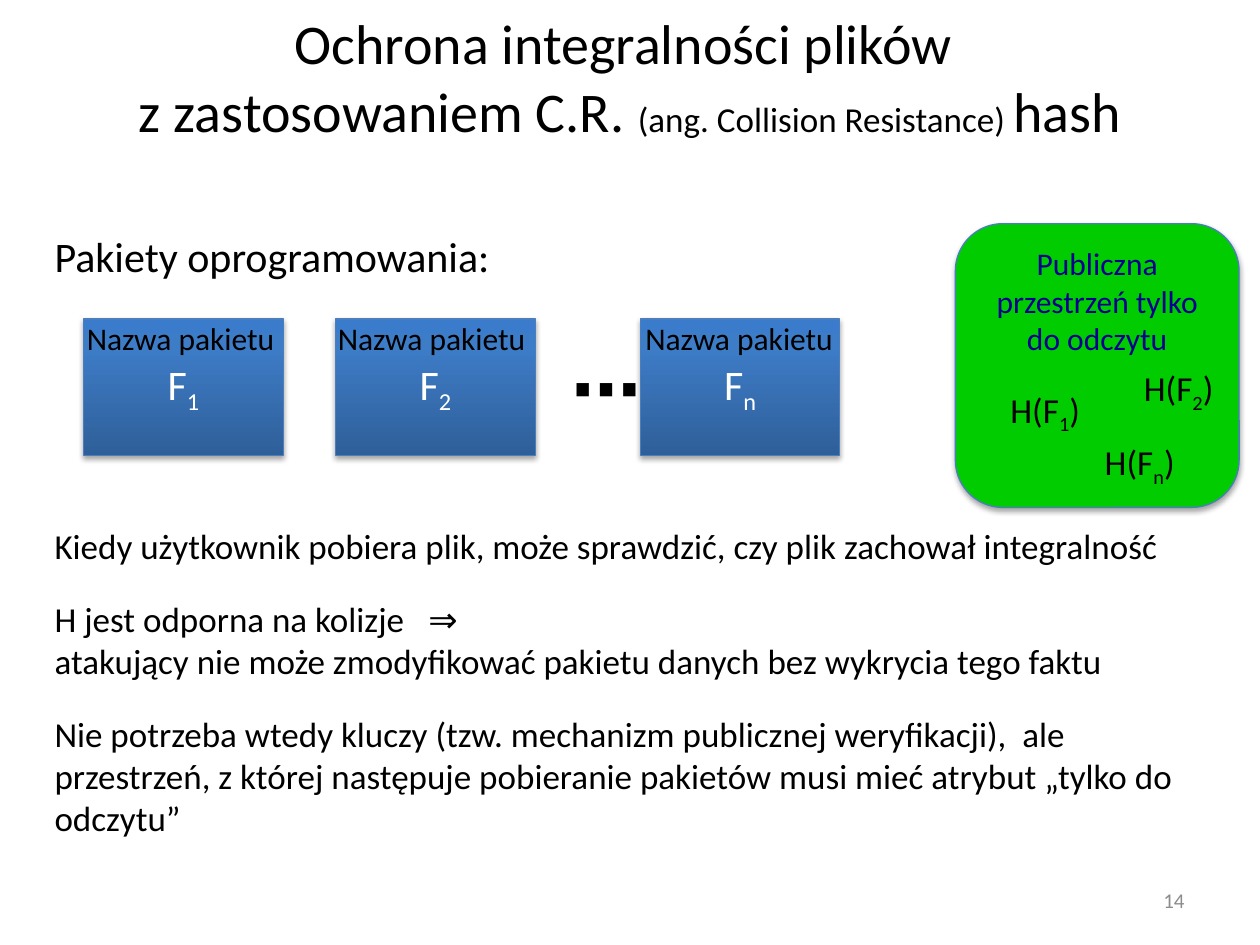
from lxml import etree
from pptx import Presentation
from pptx.dml.color import RGBColor
from pptx.enum.shapes import MSO_SHAPE
from pptx.enum.text import MSO_ANCHOR, PP_ALIGN
from pptx.oxml import parse_xml
from pptx.util import Cm, Pt

RECT, ROUNDED = MSO_SHAPE.RECTANGLE, MSO_SHAPE.ROUNDED_RECTANGLE
LEFT, CENTER, RIGHT = PP_ALIGN.LEFT, PP_ALIGN.CENTER, PP_ALIGN.RIGHT
TOP, MIDDLE = MSO_ANCHOR.TOP, MSO_ANCHOR.MIDDLE
NS = "http://schemas.openxmlformats.org/drawingml/2006/main"
COLORS = {
    "ink": "000000", "light": "FFFFFF", "muted": "8C8C8C", "navy": "000090",
    "green": "00CC00", "edge": "4B7EBC",
    "deep": "2F5F99", "mid": "3D7CC7", "bright": "3A7CCB",
}
GRADIENT = ((0, "deep"), (80000, "mid"), (100000, "bright"))


class SlideBuilder:
    """Hold the style and current slide, and add each kind of element."""

    font = "Calibri"

    def __init__(self, slide):
        self.shapes = slide.shapes

    def color(self, name):
        return RGBColor.from_string(COLORS[name])

    def fill_text(self, shape, paragraphs, size, color="ink", align=LEFT,
                  anchor=TOP, wrap=True, bold=False):
        frame = shape.text_frame
        for name, value in {"word_wrap": wrap, "vertical_anchor": anchor}.items():
            setattr(frame, name, value)
        for index, (space, pieces) in enumerate(paragraphs):
            paragraph = frame.add_paragraph() if index else frame.paragraphs[0]
            layout = {"alignment": align, "space_before": Pt(space)}
            for name, value in layout.items():
                setattr(paragraph, name, value)
            for piece in pieces:
                if piece == "\n":
                    paragraph.add_line_break()
                    continue
                words, changes = piece if isinstance(piece, tuple) else (piece, {})
                run = paragraph.add_run()
                run.text = words
                style = {"name": self.font, "size": Pt(changes.get("size", size)),
                         "bold": bold}
                for name, value in style.items():
                    setattr(run.font, name, value)
                run.font.color.rgb = self.color(color)
                if "baseline" in changes:
                    run.font._element.set("baseline", changes["baseline"])

    def text(self, box, paragraphs, size, **style):
        shape = self.shapes.add_textbox(*map(Cm, box))
        self.fill_text(shape, paragraphs, size, **style)

    def gradient(self, shape):
        stops = "".join(
            f'<a:gs pos="{position}"><a:srgbClr val="{COLORS[name]}"/></a:gs>'
            for position, name in GRADIENT)
        shape.fill.background()
        fill = shape._element.spPr.find(f"{{{NS}}}noFill")
        fill.getparent().replace(fill, parse_xml(
            f'<a:gradFill xmlns:a="{NS}" rotWithShape="1"><a:gsLst>{stops}</a:gsLst>'
            '<a:lin ang="16200000" scaled="0"/></a:gradFill>'))

    def shadow(self, shape):
        shape.shadow.inherit = False
        effects = shape._element.spPr.find(f"{{{NS}}}effectLst")
        cast = etree.SubElement(effects, f"{{{NS}}}outerShdw", blurRad="39370",
                                dist="22860", dir="5400000", rotWithShape="0")
        tint = etree.SubElement(cast, f"{{{NS}}}srgbClr", val=COLORS["ink"])
        etree.SubElement(tint, f"{{{NS}}}alpha", val="35000")

    def block(self, kind, box, paragraphs, size, fill=None, **style):
        shape = self.shapes.add_shape(kind, *map(Cm, box))
        if fill:
            shape.fill.solid()
            shape.fill.fore_color.rgb = self.color(fill)
        else:
            self.gradient(shape)
        shape.line.color.rgb = self.color("edge")
        shape.line.width = Pt(0.75)
        self.shadow(shape)
        self.fill_text(shape, paragraphs, size, align=CENTER, **style)


def subscript(mark):
    return mark, {"baseline": "-25000"}


def main():
    deck = Presentation()
    deck.slide_width, deck.slide_height = Cm(25.4), Cm(19.05)
    slide = deck.slides.add_slide(deck.slide_layouts[6])
    page = SlideBuilder(slide)

    page.text((1.27, 0.76, 22.86, 1.55), [(0, [
        "Ochrona integralności plików ", "\n", "z zastosowaniem C.R. ",
        ("(ang. Collision Resistance) ", {"size": 20}), "hash"])],
        32, align=CENTER, anchor=MIDDLE)
    page.text((18.2, 17.65, 5.93, 1.01), [(0, ["14"])], 12,
              color="muted", align=RIGHT, anchor=MIDDLE)
    page.text((0.85, 10.44, 23.5, 6.88), [
        (4, ["Kiedy użytkownik pobiera plik, może sprawdzić, "
             "czy plik zachował integralność"]),
        (17.8, ["H jest odporna na kolizje   ⇒"]),
        (0, ["atakujący nie może zmodyfikować pakietu danych "
             "bez wykrycia tego faktu"]),
        (17.8, ["Nie potrzeba wtedy kluczy (tzw. mechanizm publicznej "
                "weryfikacji),  ale przestrzeń, z której następuje pobieranie "
                "pakietów musi mieć atrybut „tylko do odczytu”"]),
    ], 20)

    packages = (("1", 1.69, 1.5), ("2", 6.77, 6.56), ("n", 12.91, 12.76))
    for mark, left, label_left in packages:
        page.block(RECT, (left, 6.43, 4.02, 2.75), [(0, ["F", subscript(mark)])],
                   24, color="light", anchor=MIDDLE)
        page.text((label_left, 6.3, 4.34, 1.02), [(0, ["Nazwa pakietu"])], 18,
                  wrap=False)
    page.text((11.28, 6.83, 1.22, 1.96), [(0, ["⋯"])], 40, wrap=False, bold=True)
    page.text((0.85, 4.52, 9.37, 1.27), [(0, ["Pakiety oprogramowania:"])], 24,
              wrap=False)

    page.shapes = slide.shapes.add_group_shape().shapes
    page.block(ROUNDED, (19.26, 4.51, 5.72, 5.72),
               [(0, ["Publiczna przestrzeń tylko do odczytu"])], 18,
               fill="green", color="navy")
    for mark, left, top in (("1", 20.12, 7.7), ("2", 22.81, 7.27), ("n", 22.02, 8.75)):
        page.text((left, top, 1.96, 1.12), [(0, ["H(F", subscript(mark), ")"])], 20,
                  wrap=False)

    deck.save("out.pptx")


if __name__ == "__main__":
    main()
